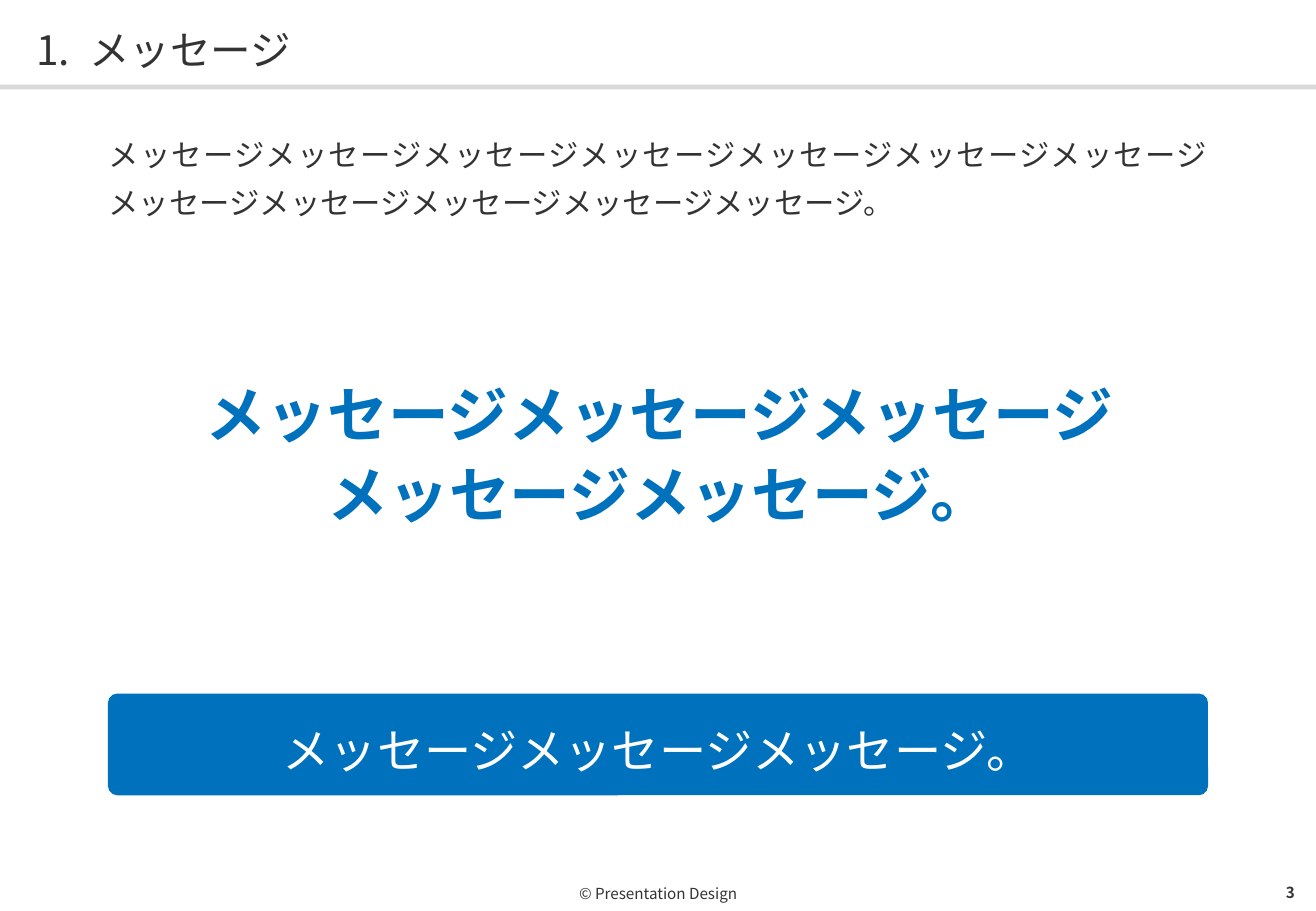
from lxml.etree import SubElement
from pptx import Presentation
from pptx.dml.color import RGBColor
from pptx.enum.shapes import MSO_SHAPE
from pptx.enum.text import MSO_ANCHOR, MSO_AUTO_SIZE, PP_ALIGN
from pptx.oxml.ns import qn
from pptx.util import Pt

FONT = "Noto Sans CJK JP"
COLORS = {"ink": "333333", "blue": "0071BC", "rule": "D9D9D9", "white": "FFFFFF"}
TITLE = ["1.\tメッセージ"]
LEAD = ["メッセージメッセージメッセージメッセージメッセージメッセージメッセージ"
        "メッセージメッセージメッセージメッセージメッセージ。"]
CLAIM = ["メッセージメッセージメッセージ", "メッセージメッセージ。"]
CLOSE = ["メッセージメッセージメッセージ。"]
CREDIT = ["© Presentation Design"]
PAGE = ["3"]

WIDTH, HEIGHT = 780, 540
EDGE = 64
SPAN = WIDTH - 2 * EDGE
HANG = 31.2


def place(shape, left, top, width, height):
    shape.left, shape.top = Pt(left), Pt(top)
    shape.width, shape.height = Pt(width), Pt(height)


def write(shape, lines, size, color="ink", align=PP_ALIGN.LEFT, bold=False,
          space=1.0, after=0, anchor=MSO_ANCHOR.MIDDLE, inset=(0, 0, 0, 0), hang=0):
    frame = shape.text_frame
    frame.word_wrap = True
    frame.auto_size = MSO_AUTO_SIZE.NONE
    frame.vertical_anchor = anchor
    frame.margin_left, frame.margin_top, frame.margin_right, frame.margin_bottom = map(Pt, inset)
    for i, line in enumerate(lines):
        para = frame.add_paragraph() if i else frame.paragraphs[0]
        para.alignment = align
        para.line_spacing = space
        para.space_before, para.space_after = Pt(0), Pt(after)
        if hang:
            props = para._p.get_or_add_pPr()
            props.set("marL", str(Pt(hang)))
            props.set("indent", str(-Pt(hang)))
        run = para.add_run()
        run.text = line
        font = run.font
        font.name, font.size, font.bold = FONT, Pt(size), bold
        font.color.rgb = RGBColor.from_string(COLORS[color])
        SubElement(run._r.get_or_add_rPr(), qn("a:ea"), typeface=FONT)


def add_box(slide, kind, left, top, width, height, fill=None, round=None):
    box = slide.shapes.add_shape(kind, Pt(left), Pt(top), Pt(width), Pt(height))
    box.shadow.inherit = False
    box.line.fill.background()
    if fill:
        box.fill.solid()
        box.fill.fore_color.rgb = RGBColor.from_string(COLORS[fill])
    else:
        box.fill.background()
    if round is not None:
        box.adjustments[0] = round
    return box


def add_text(slide, left, top, width, height, lines, size, **style):
    box = slide.shapes.add_textbox(Pt(left), Pt(top), Pt(width), Pt(height))
    write(box, lines, size, **style)


def main():
    deck = Presentation()
    deck.slide_width, deck.slide_height = Pt(WIDTH), Pt(HEIGHT)
    slide = deck.slides.add_slide(deck.slide_layouts[5])
    title = slide.shapes.title

    add_box(slide, MSO_SHAPE.RECTANGLE, 0, 50.2, WIDTH, 2.8, fill="rule")

    place(title, 21.6, 12.2, 737, 31)
    write(title, TITLE, 24, space=1.1, hang=HANG)

    lead = add_box(slide, MSO_SHAPE.ROUNDED_RECTANGLE, EDGE + 0.3, 74.4, SPAN - 0.3, 55,
                   round=0)
    write(lead, LEAD, 18, align=PP_ALIGN.JUSTIFY, space=1.3, after=12,
          anchor=MSO_ANCHOR.TOP)

    claim = add_box(slide, MSO_SHAPE.ROUNDED_RECTANGLE, EDGE + 1, 218.9, SPAN, 96,
                    round=0)
    write(claim, CLAIM, 36, color="blue", align=PP_ALIGN.CENTER, bold=True,
          space=1.1, anchor=MSO_ANCHOR.TOP)

    close = add_box(slide, MSO_SHAPE.ROUNDED_RECTANGLE, EDGE, 411.1, SPAN, 60.3,
                    fill="blue", round=0.09)
    write(close, CLOSE, 28, color="white", align=PP_ALIGN.CENTER, space=1.1,
          inset=(14.4, 11.5, 14.4, 8.6))

    add_text(slide, EDGE, 519, SPAN, 21, CREDIT, 9, align=PP_ALIGN.CENTER)
    add_text(slide, 730, 519, 37.5, 20, PAGE, 9, align=PP_ALIGN.RIGHT, bold=True)

    deck.save("out.pptx")


if __name__ == "__main__":
    main()
